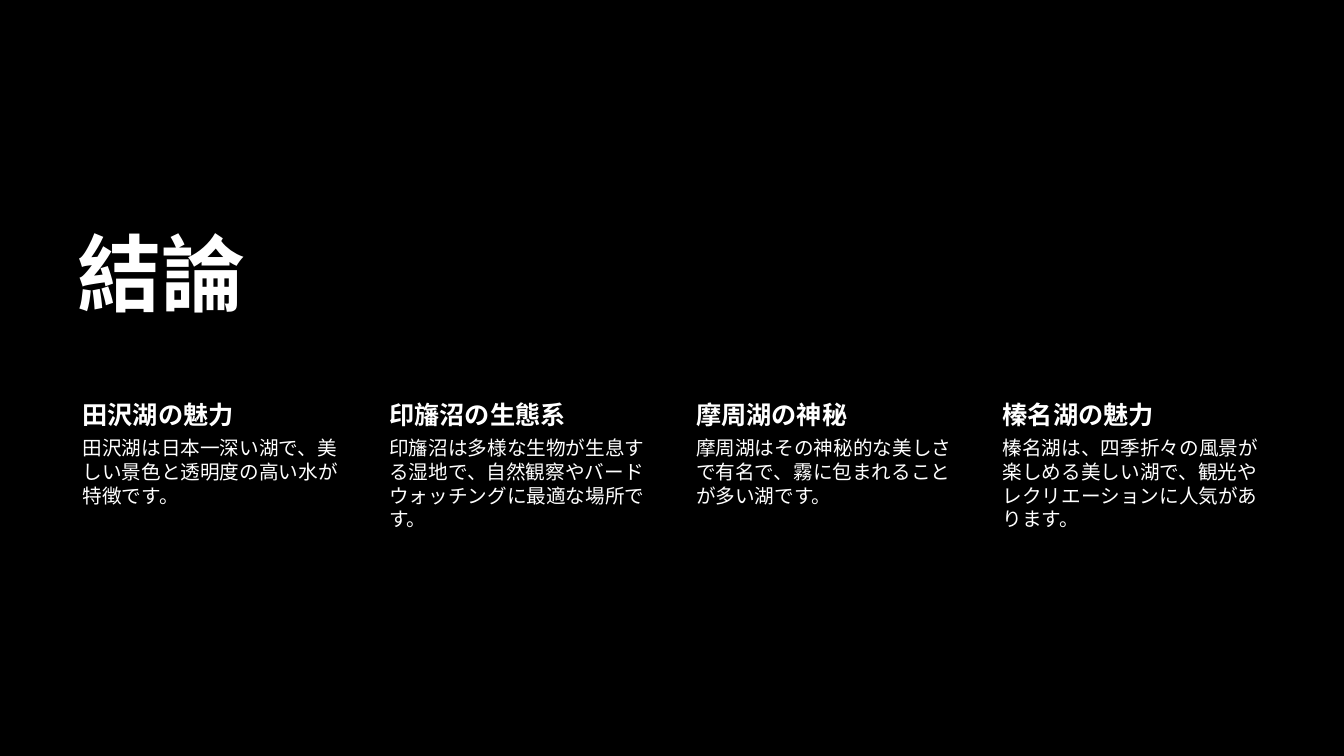
from dataclasses import dataclass

from pptx import Presentation
from pptx.dml.color import RGBColor
from pptx.enum.text import MSO_ANCHOR as Anchor
from pptx.util import Pt


@dataclass(frozen=True)
class Theme:
    background: RGBColor = RGBColor(0, 0, 0)
    text: RGBColor = RGBColor(255, 255, 255)
    font: str = "Arial"
    title_size: int = 60
    heading_size: int = 18
    body_size: int = 14


THEME = Theme()
LEFT = 48.2
COLUMN_WIDTH = 199.4
COLUMN_PITCH = 219.1
HEADING_TOP = 283
HEADING_HEIGHT = 27.3
BODY_HEIGHT = 167.8

LAKES = [
    ("田沢湖の魅力", "田沢湖は日本一深い湖で、美しい景色と透明度の高い水が特徴です。"),
    ("印旛沼の生態系", "印旛沼は多様な生物が生息する湿地で、自然観察やバードウォッチングに最適な場所です。"),
    ("摩周湖の神秘", "摩周湖はその神秘的な美しさで有名で、霧に包まれることが多い湖です。"),
    ("榛名湖の魅力", "榛名湖は、四季折々の風景が楽しめる美しい湖で、観光やレクリエーションに人気があります。"),
]


def add_text(slide, text, box, size, bold=False, insets=(7.2, 3.6, 7.2, 3.6),
             anchor=Anchor.TOP, line_spacing=None):
    frame = slide.shapes.add_textbox(*map(Pt, box)).text_frame
    frame.word_wrap = True
    frame.vertical_anchor = anchor
    (frame.margin_left, frame.margin_top,
     frame.margin_right, frame.margin_bottom) = map(Pt, insets)
    paragraph = frame.paragraphs[0]
    paragraph.line_spacing = line_spacing
    run = paragraph.add_run()
    run.text = text
    run.font.name = THEME.font
    run.font.size = Pt(size)
    run.font.bold = bold
    run.font.color.rgb = THEME.text


def add_lake(slide, left, heading, description):
    add_text(slide, heading, (left, HEADING_TOP, COLUMN_WIDTH, HEADING_HEIGHT),
             THEME.heading_size, bold=True, insets=(10.8, 2.2, 2.2, 2.2))
    add_text(slide, description,
             (left, HEADING_TOP + HEADING_HEIGHT, COLUMN_WIDTH, BODY_HEIGHT),
             THEME.body_size, insets=(10.8, 1.4, 1.4, 1.4))


def main():
    deck = Presentation()
    deck.slide_width, deck.slide_height = Pt(960), Pt(540)
    slide = deck.slides.add_slide(deck.slide_layouts[6])
    slide.background.fill.solid()
    slide.background.fill.fore_color.rgb = THEME.background

    add_text(slide, "結論", (LEFT, 145.4, 578.2, 89.3), THEME.title_size,
             bold=True, anchor=Anchor.BOTTOM, line_spacing=0.9)
    for column, (heading, description) in enumerate(LAKES):
        add_lake(slide, LEFT + column * COLUMN_PITCH, heading, description)

    deck.save("out.pptx")


if __name__ == "__main__":
    main()
